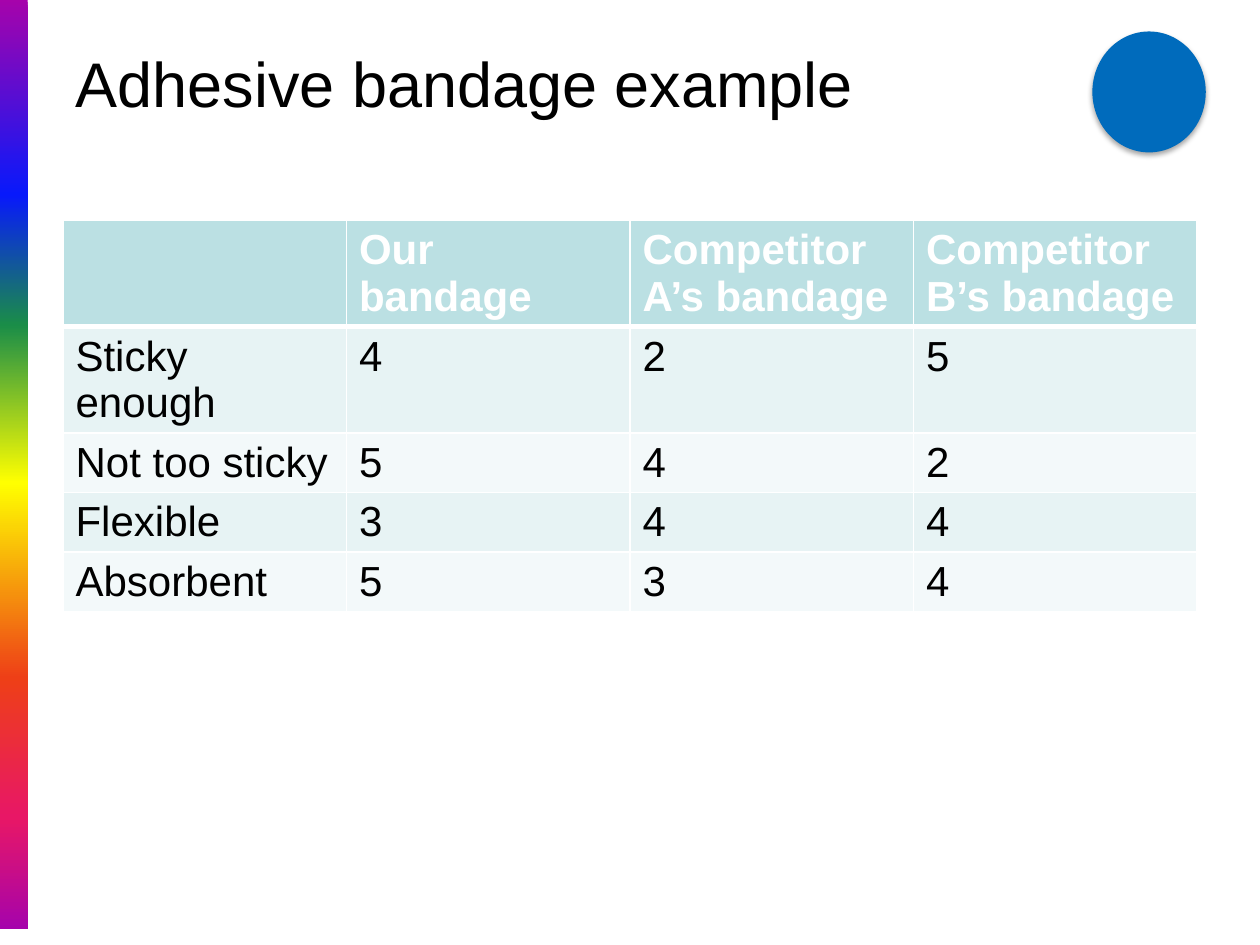
from dataclasses import dataclass

from lxml.etree import SubElement
from pptx import Presentation
from pptx.dml.color import RGBColor
from pptx.enum.shapes import MSO_SHAPE as Shape
from pptx.enum.text import MSO_ANCHOR as Anchor, PP_ALIGN as Align
from pptx.oxml import parse_xml
from pptx.oxml.ns import nsdecls, qn
from pptx.util import Emu, Pt

EMU_PER_PX = 9144  # 100 px to the inch
FONT = "Arial"
COLORS = {
    "white": "FFFFFF",
    "black": "000000",
    "header": "BBE0E3",
    "odd_row": "E7F3F4",
    "even_row": "F3F9FA",
    "disc": "006BBC",
}
RAINBOW = [(0, "A603AB"), (21, "0819FB"), (35, "1A8D48"), (52, "FFFF00"),
           (73, "EE3F17"), (88, "E81766"), (100, "A603AB")]
RATINGS = [
    ["", "Our bandage", "Competitor A’s bandage", "Competitor B’s bandage"],
    ["Sticky enough", "4", "2", "5"],
    ["Not too sticky", "5", "4", "2"],
    ["Flexible", "3", "4", "4"],
    ["Absorbent", "5", "3", "4"],
]


@dataclass(frozen=True)
class Box:
    left: int
    top: int
    width: int
    height: int

    def emu(self) -> list[Emu]:
        return [px(v) for v in (self.left, self.top, self.width, self.height)]


@dataclass(frozen=True)
class RowStyle:
    fill: str
    color: str
    bold: bool
    top_pt: int
    bottom_pt: int


HEADER = RowStyle("header", "white", True, 1, 3)
FIRST = RowStyle("odd_row", "black", False, 3, 1)
ODD = RowStyle("odd_row", "black", False, 1, 1)
EVEN = RowStyle("even_row", "black", False, 1, 1)
ROW_STYLES = [HEADER, FIRST, EVEN, ODD, EVEN]


def px(value: int) -> Emu:
    return Emu(value * EMU_PER_PX)


def rgb(name: str) -> RGBColor:
    return RGBColor.from_string(COLORS[name])


def style_text(tf, size: int, color: str, bold: bool = False) -> None:
    for p in tf.paragraphs:
        for r in p.runs:
            r.font.name = FONT
            r.font.size = Pt(size)
            r.font.bold = bold
            r.font.color.rgb = rgb(color)


def add_plain_shape(slide, kind: Shape, box: Box):
    sp = slide.shapes.add_shape(kind, *box.emu())
    sp.shadow.inherit = False
    sp.line.fill.background()
    return sp


def add_rainbow_bar(slide, box: Box) -> None:
    sp = add_plain_shape(slide, Shape.RECTANGLE, box)
    sp.fill.gradient()
    sp.fill.gradient_angle = 270
    stops = sp._element.spPr.find(qn("a:gradFill")).find(qn("a:gsLst"))
    stops.clear()
    for percent, color in RAINBOW:
        stop = SubElement(stops, qn("a:gs"), pos=str(percent * 1000))
        SubElement(stop, qn("a:srgbClr"), val=color)
    slide.shapes._spTree.insert(2, sp._element)  # behind the title


def add_disc(slide, box: Box) -> None:
    sp = add_plain_shape(slide, Shape.OVAL, box)
    sp.fill.solid()
    sp.fill.fore_color.rgb = rgb("disc")
    effects = sp._element.spPr.find(qn("a:effectLst"))
    effects.append(parse_xml(
        f'<a:outerShdw {nsdecls("a")} blurRad="{Pt(3.1)}" dist="{Pt(1.8)}" '
        f'dir="5400000" rotWithShape="0"><a:srgbClr val="{COLORS["black"]}">'
        '<a:alpha val="35000"/></a:srgbClr></a:outerShdw>'))


def set_borders(cell, top_pt: int, bottom_pt: int) -> None:
    tc_pr = cell._tc.get_or_add_tcPr()
    widths = {"lnL": 1, "lnR": 1, "lnT": top_pt, "lnB": bottom_pt}
    for i, (tag, width) in enumerate(widths.items()):
        tc_pr.insert(i, parse_xml(
            f'<a:{tag} {nsdecls("a")} w="{Pt(width)}"><a:solidFill>'
            f'<a:srgbClr val="{COLORS["white"]}"/></a:solidFill></a:{tag}>'))


def add_ratings_table(slide, box: Box) -> None:
    table = slide.shapes.add_table(len(RATINGS), len(RATINGS[0]), *box.emu()).table
    for row, texts, style in zip(table.rows, RATINGS, ROW_STYLES):
        for cell, text in zip(row.cells, texts):
            cell.text_frame.text = text
            style_text(cell.text_frame, 24, style.color, style.bold)
            cell.fill.solid()
            cell.fill.fore_color.rgb = rgb(style.fill)
            set_borders(cell, style.top_pt, style.bottom_pt)


def set_title(slide, text: str, box: Box) -> None:
    title = slide.shapes.title
    title.left, title.top, title.width, title.height = box.emu()
    tf = title.text_frame
    tf.text = text
    tf.vertical_anchor = Anchor.MIDDLE
    tf.paragraphs[0].alignment = Align.LEFT
    style_text(tf, 36, "black")


def main() -> None:
    prs = Presentation()
    prs.slide_width, prs.slide_height = px(1000), px(750)
    slide = prs.slides.add_slide(prs.slide_layouts[5])
    add_rainbow_bar(slide, Box(0, 0, 22, 737))
    set_title(slide, "Adhesive bandage example", Box(50, 30, 900, 70))
    add_ratings_table(slide, Box(50, 175, 900, 205))
    add_disc(slide, Box(867, 25, 90, 96))
    prs.save("out.pptx")


if __name__ == "__main__":
    main()
